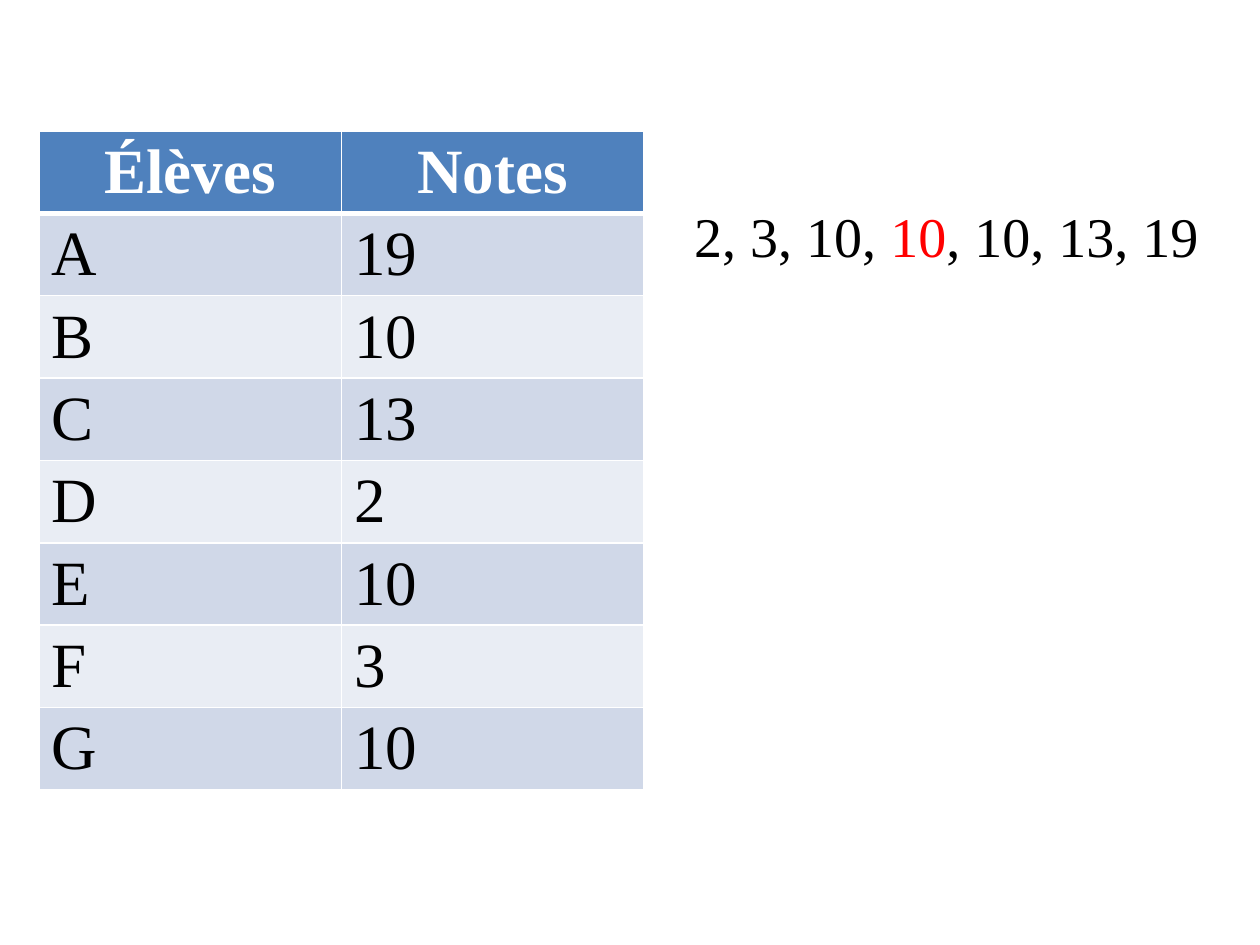
from lxml import etree
from pptx import Presentation
from pptx import util as u
from pptx.dml.color import RGBColor
from pptx.enum import text
from pptx.oxml import ns

FONT = "Times New Roman"
WHITE = RGBColor(0xFF, 0xFF, 0xFF)
BLACK = RGBColor(0, 0, 0)
RED = RGBColor(0xFF, 0, 0)
HEADER = RGBColor(0x4F, 0x81, 0xBD)
BANDS = [RGBColor(0xE9, 0xED, 0xF4), RGBColor(0xD0, 0xD8, 0xE8)]

GRADES = [
    ("Élèves", "Notes"),
    ("A", "19"),
    ("B", "10"),
    ("C", "13"),
    ("D", "2"),
    ("E", "10"),
    ("F", "3"),
    ("G", "10"),
]
SORTED_GRADES = [("2, 3, 10, ", BLACK), ("10", RED), (", 10, 13, 19", BLACK)]

COL_WIDTH = u.Inches(2.4)
ROW_HEIGHT = u.Inches(0.65)


def set_font(p, size, color, bold=False):
    p.font.name = FONT
    p.font.size = u.Pt(size)
    p.font.color.rgb = color
    p.font.bold = bold


def set_borders(cell, **widths):
    """Draw white borders; each keyword is a side (L, R, T, B) in points."""
    tc_pr = cell._tc.get_or_add_tcPr()
    for side, width in widths.items():
        line = etree.SubElement(tc_pr, ns.qn(f"a:ln{side}"), w=str(u.Pt(width)))
        fill = etree.SubElement(line, ns.qn("a:solidFill"))
        etree.SubElement(fill, ns.qn("a:srgbClr"), val=str(WHITE))


def add_grades_table(s, left, top):
    rows, cols = len(GRADES), len(GRADES[0])
    table = s.shapes.add_table(
        rows, cols, left, top, cols * COL_WIDTH, rows * ROW_HEIGHT
    ).table
    for col in table.columns:
        col.width = COL_WIDTH
    for i, values in enumerate(GRADES):
        is_header = i == 0
        for j, value in enumerate(values):
            cell = table.cell(i, j)
            set_borders(cell, L=1, R=1, T=3 if i == 1 else 1, B=3 if is_header else 1)
            cell.fill.solid()
            cell.fill.fore_color.rgb = HEADER if is_header else BANDS[i % 2]
            cell.text = value
            p = cell.text_frame.paragraphs[0]
            set_font(p, 36, WHITE if is_header else BLACK, is_header)
            if is_header:
                p.alignment = text.PP_ALIGN.CENTER


def add_sorted_grades(s, left, top, width, height):
    tf = s.shapes.add_textbox(left, top, width, height).text_frame
    tf.word_wrap = True
    tf.auto_size = text.MSO_AUTO_SIZE.SHAPE_TO_FIT_TEXT
    p = tf.paragraphs[0]
    set_font(p, 32, BLACK)
    for value, color in SORTED_GRADES:
        r = p.add_run()
        r.text = value
        r.font.color.rgb = color


def main():
    prs = Presentation()
    prs.slide_width, prs.slide_height = u.Inches(10), u.Inches(7.5)
    s = prs.slides.add_slide(prs.slide_layouts[6])
    add_grades_table(s, u.Inches(0.31), u.Inches(1.04))
    left = u.Inches(5.41)
    add_sorted_grades(s, left, u.Inches(1.55), prs.slide_width - left, u.Inches(0.64))
    prs.save("out.pptx")


if __name__ == "__main__":
    main()
